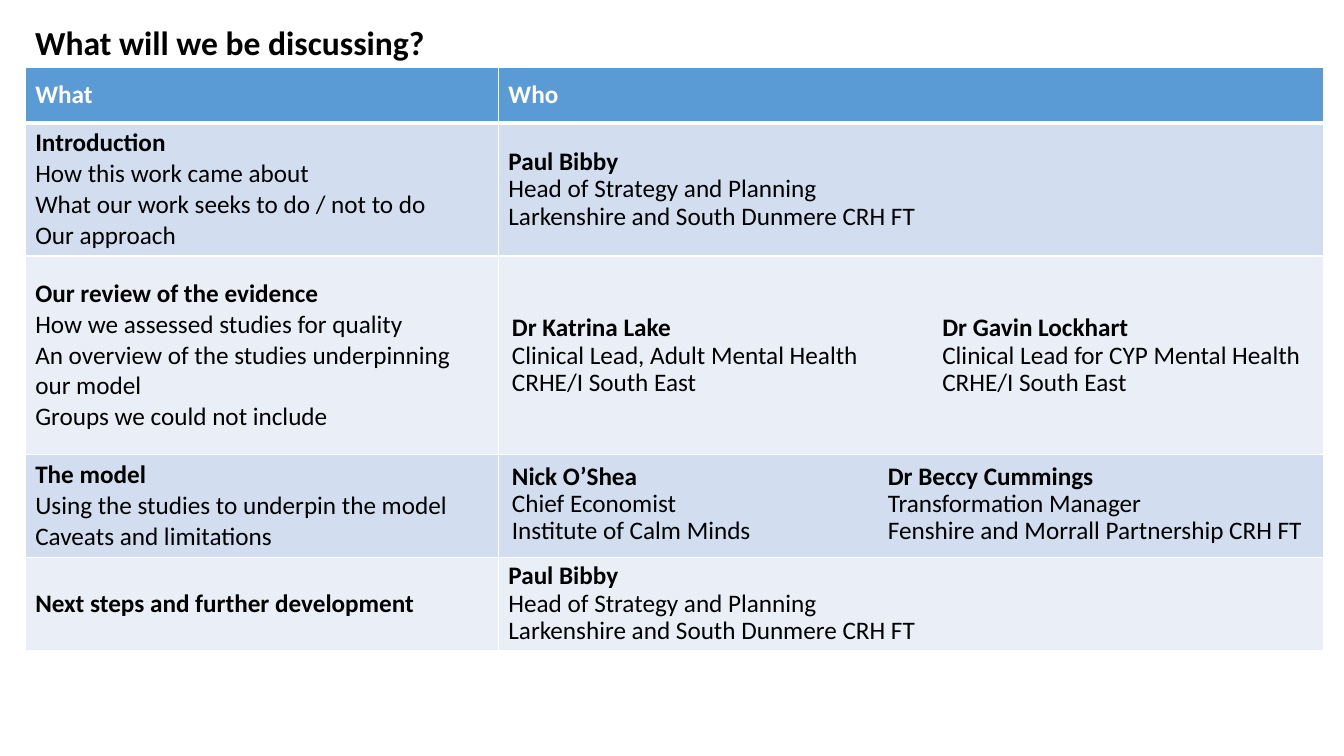
from dataclasses import dataclass

from lxml import etree
from pptx import Presentation
from pptx.dml.color import RGBColor
from pptx.enum.text import MSO_ANCHOR, MSO_AUTO_SIZE
from pptx.oxml.ns import qn
from pptx.util import Pt

MIDDLE = MSO_ANCHOR.MIDDLE
FIT_SHAPE = MSO_AUTO_SIZE.SHAPE_TO_FIT_TEXT


@dataclass(frozen=True)
class Theme:
    font: str = "Calibri"
    title_size: float = 24
    body_size: float = 18
    text: str = "000000"
    white: str = "FFFFFF"
    header: str = "5B9BD5"
    bands: tuple[str, str] = ("D2DEEF", "EAEFF7")
    thin: float = 1
    thick: float = 3


@dataclass(frozen=True)
class AgendaRow:
    height: float
    what: tuple[str, ...]
    who: tuple[str, ...] = ()


@dataclass(frozen=True)
class TextBlock:
    left: float
    top: float
    width: float
    height: float
    lines: tuple[str, ...]
    size: float
    spacing: float = 1.0


THEME = Theme()
TABLE_LEFT, TABLE_TOP = 18, 48.2
COLUMN_WIDTHS = (338, 589.4)
MIN_ROW_HEIGHT = 29.5  # rows grow to fit their text
SPEAKER_SPACING = 0.9

REGION = "CRHE/I South East"
PAUL = ("Paul Bibby", "Head of Strategy and Planning",
        "Larkenshire and South Dunmere CRH FT")

AGENDA = (
    AgendaRow(39.6, ("What",), ("Who",)),
    AgendaRow(MIN_ROW_HEIGHT,
              ("Introduction", "How this work came about",
               "What our work seeks to do / not to do", "Our approach"), PAUL),
    AgendaRow(142, ("Our review of the evidence", "How we assessed studies for quality",
                    "An overview of the studies underpinning our model",
                    "Groups we could not include")),
    AgendaRow(MIN_ROW_HEIGHT,
              ("The model", "Using the studies to underpin the model",
               "Caveats and limitations")),
    AgendaRow(MIN_ROW_HEIGHT, ("Next steps and further development",), PAUL),
)


def speaker(left: float, top: float, width: float, *lines: str) -> TextBlock:
    return TextBlock(left, top, width, 66, lines, THEME.body_size, SPEAKER_SPACING)


EVIDENCE_TOP, MODEL_TOP = 221.5, 327.4
BLOCKS = (
    TextBlock(18, 12.2, 460, 36, ("What will we be discussing?",), THEME.title_size),
    speaker(358.6, EVIDENCE_TOP, 312, "Dr Katrina Lake",
            "Clinical Lead, Adult Mental Health", REGION),
    speaker(666, EVIDENCE_TOP, 284, "Dr Gavin Lockhart",
            "Clinical Lead for CYP Mental Health", REGION),
    speaker(358.6, MODEL_TOP, 280, "Nick O’Shea",
            "Chief Economist", "Institute of Calm Minds"),
    speaker(627.1, MODEL_TOP, 312, "Dr Beccy Cummings",
            "Transformation Manager", "Fenshire and Morrall Partnership CRH FT"),
)


def write_lines(tf, lines: tuple[str, ...], size: float, color: str,
                spacing: float = 1.0) -> None:
    """Write one paragraph per line, with the first line bold."""
    for i, line in enumerate(lines):
        p = tf.add_paragraph() if i else tf.paragraphs[0]
        p.line_spacing = spacing
        r = p.add_run()
        r.text = line
        font_format = {"name": THEME.font, "size": Pt(size), "bold": i == 0}
        for name, value in font_format.items():
            setattr(r.font, name, value)
        r.font.color.rgb = RGBColor.from_string(color)


def set_borders(cell, widths: dict[str, float]) -> None:
    """Draw white cell borders; the lines must precede the fill."""
    tc_pr = cell._tc.get_or_add_tcPr()
    for i, (side, width) in enumerate(widths.items()):
        ln = etree.Element(qn(f"a:ln{side}"), w=str(Pt(width)))
        fill = etree.SubElement(ln, qn("a:solidFill"))
        etree.SubElement(fill, qn("a:srgbClr"), val=THEME.white)
        tc_pr.insert(i, ln)


def add_agenda(s, rows: tuple[AgendaRow, ...]) -> None:
    frame = s.shapes.add_table(
        len(rows), len(COLUMN_WIDTHS), Pt(TABLE_LEFT), Pt(TABLE_TOP),
        Pt(sum(COLUMN_WIDTHS)), Pt(sum(row.height for row in rows)))
    table = frame.table
    for column, width in zip(table.columns, COLUMN_WIDTHS):
        column.width = Pt(width)
    header_borders = {"L": THEME.thin, "R": THEME.thin,
                      "T": THEME.thin, "B": THEME.thick}
    for i, row in enumerate(rows):
        table.rows[i].height = Pt(row.height)
        fill = THEME.bands[(i - 1) % 2] if i else THEME.header
        color = THEME.text if i else THEME.white
        for j, lines in enumerate((row.what, row.who)):
            cell = table.cell(i, j)
            cell.vertical_anchor = MIDDLE
            cell.fill.solid()
            cell.fill.fore_color.rgb = RGBColor.from_string(fill)
            # Body cells take their thin white borders from the table style
            if i == 0:
                set_borders(cell, header_borders)
            spacing = SPEAKER_SPACING if i and j else 1.0
            write_lines(cell.text_frame, lines, THEME.body_size, color, spacing)


def add_block(s, block: TextBlock) -> None:
    sp = s.shapes.add_textbox(Pt(block.left), Pt(block.top),
                              Pt(block.width), Pt(block.height))
    tf = sp.text_frame
    for name, value in {"word_wrap": True, "auto_size": FIT_SHAPE}.items():
        setattr(tf, name, value)
    write_lines(tf, block.lines, block.size, THEME.text, block.spacing)


def main() -> None:
    prs = Presentation()
    prs.slide_width, prs.slide_height = Pt(960), Pt(540)
    s = prs.slides.add_slide(prs.slide_layouts[6])

    # Agenda table
    add_agenda(s, AGENDA)

    # Title, and the speakers who share a row
    for block in BLOCKS:
        add_block(s, block)

    prs.save("out.pptx")


if __name__ == "__main__":
    main()
